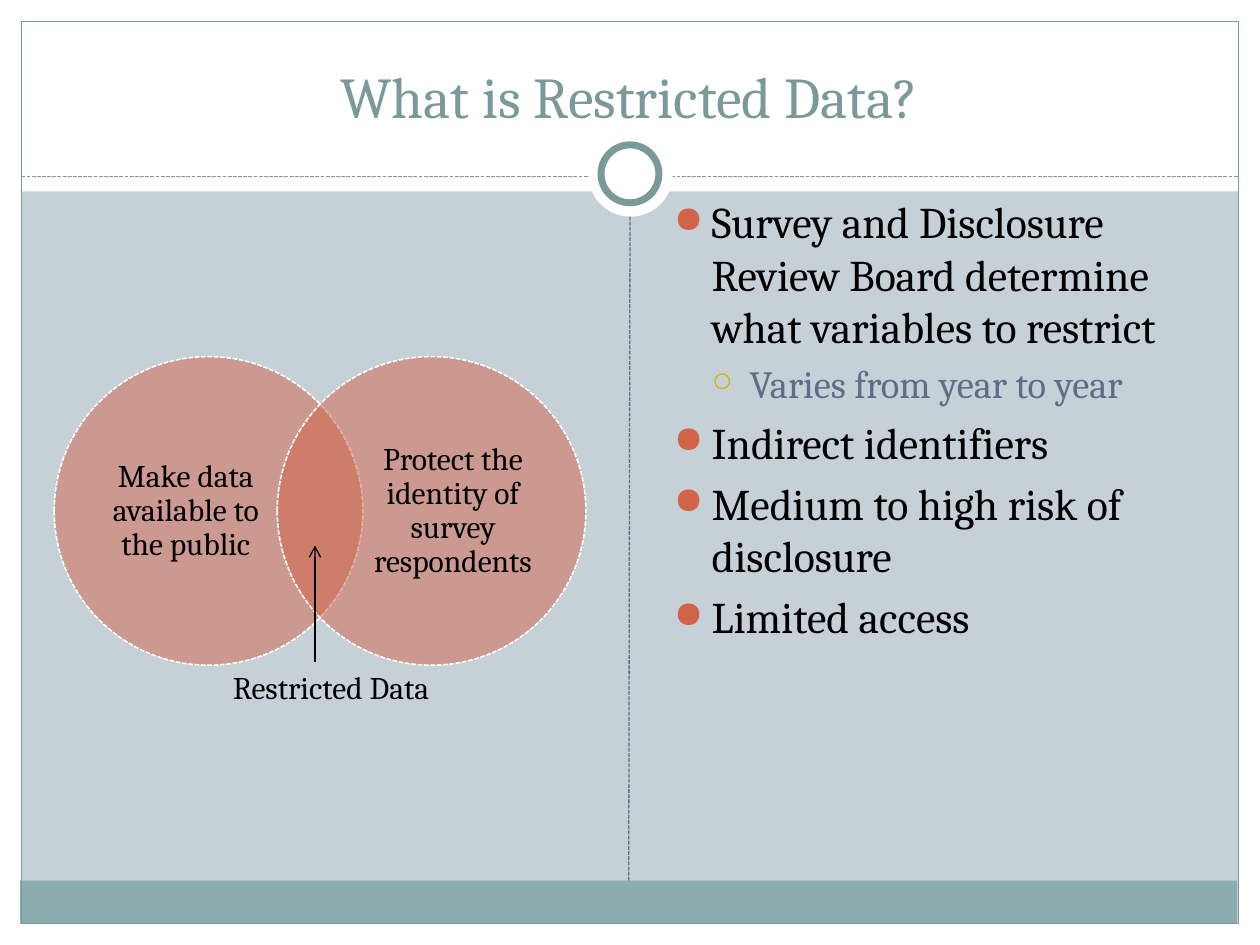
from lxml import etree
from pptx import Presentation
from pptx.dml.color import RGBColor
from pptx.enum.dml import MSO_LINE
from pptx.enum.shapes import MSO_CONNECTOR, MSO_SHAPE
from pptx.enum.text import MSO_ANCHOR, MSO_AUTO_SIZE, PP_ALIGN
from pptx.oxml.ns import qn
from pptx.util import Inches, Pt

RECTANGLE = MSO_SHAPE.RECTANGLE
OVAL = MSO_SHAPE.OVAL
STRAIGHT = MSO_CONNECTOR.STRAIGHT
DASH = MSO_LINE.SQUARE_DOT
CENTER = PP_ALIGN.CENTER
LEFT = PP_ALIGN.LEFT
TOP = MSO_ANCHOR.TOP
MIDDLE = MSO_ANCHOR.MIDDLE
BOTTOM = MSO_ANCHOR.BOTTOM
NO_AUTOFIT = MSO_AUTO_SIZE.NONE
TITLE_ONLY = 5

WHITE, BLACK = "FFFFFF", "000000"
BACKGROUND, TEAL, FOOTER = "C5D1D7", "7C999A", "8CADAE"
SLATE, CORAL, OLIVE = "646B86", "D16349", "CCB400"

BULLET_STYLES = [
    {"size": 25, "color": BLACK, "mark": "●", "mark_color": CORAL, "percent": 85},
    {"size": 22, "color": SLATE, "mark": "○", "mark_color": OLIVE, "percent": 70},
]
BULLETS = [
    (0, "Survey and Disclosure Review Board determine what variables to restrict"),
    (1, "Varies from year to year"),
    (0, "Indirect identifiers"),
    (0, "Medium to high risk of disclosure"),
    (0, "Limited access"),
]
VENN = [
    (0.43, 0.77, "Make data available to the public"),
    (2.2, 2.89, "Protect the identity of survey respondents"),
]


def rgb(value):
    return RGBColor.from_string(value)


def add_xml(parent, tag, **attributes):
    return etree.SubElement(parent, qn(tag), attributes)


class SlideBuilder:
    font = "Cambria"

    def __init__(self, slide):
        self.slide = slide
        self.shapes = slide.shapes

    def background(self, color):
        fill = self.slide.background.fill
        fill.solid()
        fill.fore_color.rgb = rgb(color)

    def style_line(self, line, color, width, dash=None):
        line.color.rgb = rgb(color)
        line.width = Pt(width)
        if dash is not None:
            line.dash_style = dash

    def shape(self, kind, box, fill=None, line=None, width=0.75, dash=None, alpha=None):
        shape = self.shapes.add_shape(kind, *map(Inches, box))
        shape.shadow.inherit = False
        if fill:
            shape.fill.solid()
            shape.fill.fore_color.rgb = rgb(fill)
        else:
            shape.fill.background()
        if alpha:
            color = shape.fill._xPr.find(".//" + qn("a:srgbClr"))
            add_xml(color, "a:alpha", val=str(alpha * 1000))
        if line:
            self.style_line(shape.line, line, width, dash)
        else:
            shape.line.fill.background()

    def line(self, start, end, color, dash=None, arrow=False):
        connector = self.shapes.add_connector(STRAIGHT, *map(Inches, start + end))
        self.style_line(connector.line, color, 0.75, dash)
        if arrow:
            add_xml(connector.line._get_or_add_ln(), "a:tailEnd", type="arrow")
        add_xml(connector._element.spPr, "a:effectLst")

    def format_text(self, paragraph, size, color, align=LEFT):
        paragraph.alignment = align
        for run in paragraph.runs:
            run.font.name = self.font
            run.font.size = Pt(size)
            run.font.color.rgb = rgb(color)

    def title(self, text, box):
        title = self.shapes.title
        title.left, title.top, title.width, title.height = map(Inches, box)
        frame = title.text_frame
        frame.text = text
        frame.auto_size = NO_AUTOFIT
        frame.vertical_anchor = BOTTOM
        self.format_text(frame.paragraphs[0], 33, TEAL, CENTER)
        self.shapes._spTree.append(title._element)

    def text_frame(self, box, anchor=TOP):
        frame = self.shapes.add_textbox(*map(Inches, box)).text_frame
        frame.word_wrap = True
        frame.vertical_anchor = anchor
        return frame

    def label(self, text, box):
        frame = self.text_frame(box)
        frame.text = text
        self.format_text(frame.paragraphs[0], 18, BLACK)

    def circle_text(self, text, box):
        frame = self.text_frame(box, MIDDLE)
        frame.margin_left = frame.margin_right = 0
        frame.margin_top = frame.margin_bottom = 0
        frame.text = text
        paragraph = frame.paragraphs[0]
        paragraph.line_spacing = 0.9
        self.format_text(paragraph, 18, BLACK, CENTER)

    def bullets(self, items, box):
        frame = self.text_frame(box)
        frame.text = "\n".join(text for level, text in items)
        for paragraph, (level, text) in zip(frame.paragraphs, items):
            style = BULLET_STYLES[level]
            paragraph.level = level
            paragraph.space_before = Pt(style["size"] * 0.2)
            self.format_text(paragraph, style["size"], style["color"])
            properties = paragraph._p.get_or_add_pPr()
            properties.set("marL", str(Inches(0.3 * (level + 1))))
            properties.set("indent", str(Inches(-0.3)))
            color = add_xml(properties, "a:buClr")
            add_xml(color, "a:srgbClr", val=style["mark_color"])
            add_xml(properties, "a:buSzPct", val=str(style["percent"] * 1000))
            add_xml(properties, "a:buChar", char=style["mark"])


def main():
    presentation = Presentation()
    presentation.slide_width = Inches(10)
    presentation.slide_height = Inches(7.5)
    layout = presentation.slide_layouts[TITLE_ONLY]
    builder = SlideBuilder(presentation.slides.add_slide(layout))

    builder.background(BACKGROUND)
    for box in [(0, 7.33, 10, 0.17), (0, 0, 10, 1.52),
                (0, 0, 0.17, 7.5), (9.83, 0, 0.17, 7.5)]:
        builder.shape(RECTANGLE, box, WHITE)
    builder.shape(RECTANGLE, (0.16, 6.99, 9.66, 0.34), FOOTER)
    builder.shape(RECTANGLE, (0.17, 0.17, 9.66, 7.16), line=TEAL)
    builder.line((0.17, 1.4), (9.83, 1.4), TEAL, DASH)
    builder.shape(OVAL, (4.67, 1.05, 0.67, 0.67), WHITE)
    builder.shape(OVAL, (4.77, 1.15, 0.46, 0.46), WHITE, TEAL, 4)
    builder.line((4.99, 6.99), (5, 1.72), SLATE, DASH)
    builder.title("What is Restricted Data?", (0.33, 0.25, 9.33, 0.83))

    for circle_left, text_left, text in VENN:
        builder.shape(OVAL, (circle_left, 2.83, 2.45, 2.45), CORAL, WHITE, 0.9, DASH, 50)
        builder.circle_text(text, (text_left, 3.12, 1.41, 1.87))
    builder.bullets(BULLETS, (5.25, 1.5, 4.42, 5.12))
    builder.line((2.5, 5.25), (2.5, 4.33), BLACK, arrow=True)
    builder.label("Restricted Data", (1.75, 5.25, 2, 0.4))

    presentation.save("out.pptx")


if __name__ == "__main__":
    main()
